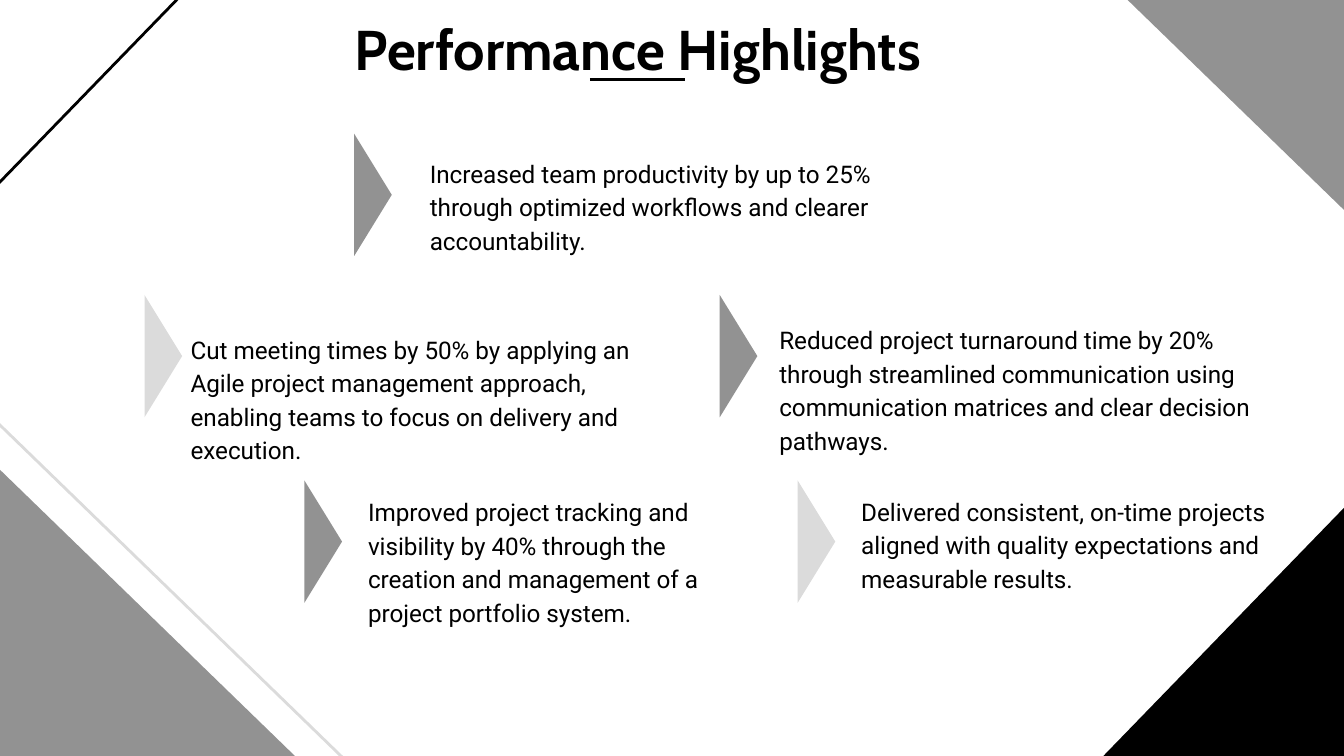
from dataclasses import dataclass

from lxml.etree import SubElement
from pptx import Presentation
from pptx.dml.color import RGBColor
from pptx.enum.shapes import MSO_CONNECTOR, MSO_SHAPE
from pptx.enum.text import PP_ALIGN
from pptx.oxml.ns import qn
from pptx.util import Inches, Pt


@dataclass(frozen=True)
class Theme:
    black: RGBColor = RGBColor(0x00, 0x00, 0x00)
    gray: RGBColor = RGBColor(0x92, 0x92, 0x92)
    light: RGBColor = RGBColor(0xDB, 0xDB, 0xDB)
    head_font: str = "Cabin"
    body_font: str = "Roboto"
    head_size: float = 30
    body_size: float = 13
    stroke: float = 1.5
    spacing: float = 1.15


class Deck:
    def __init__(self, theme):
        self.theme = theme
        self.show = Presentation()
        self.show.slide_width = Inches(10)
        self.show.slide_height = Inches(10 * 9 / 16)
        self.slide = self.show.slides.add_slide(self.show.slide_layouts[6])

    def shape(self, kind, box, turn, fill=None, line=None):
        item = self.slide.shapes.add_shape(kind, *map(Inches, box))
        item.rotation = turn
        item.shadow.inherit = False
        if fill is None:
            item.fill.background()
        else:
            item.fill.solid()
            item.fill.fore_color.rgb = fill
        if line is None:
            item.line.fill.background()
        else:
            item.line.color.rgb = line
            item.line.width = Pt(self.theme.stroke)

    def corner(self, box, turn, fill=None, line=None):
        self.shape(MSO_SHAPE.RIGHT_TRIANGLE, box, turn, fill, line)

    def marker(self, left, top, fill):
        self.shape(MSO_SHAPE.ISOSCELES_TRIANGLE, (left, top, 0.91, 0.28), 90, fill)

    def rule(self, left, right, top):
        line = self.slide.shapes.add_connector(
            MSO_CONNECTOR.STRAIGHT, Inches(left), Inches(top), Inches(right), Inches(top))
        line.line.color.rgb = self.theme.black
        line.line.width = Pt(self.theme.stroke)
        SubElement(line._element.spPr, qn("a:effectLst"))

    def text(self, words, box, font, size, inset=0.1):
        frame = self.slide.shapes.add_textbox(*map(Inches, box)).text_frame
        frame.word_wrap = True
        frame.margin_left = frame.margin_right = frame.margin_bottom = Inches(0.1)
        frame.margin_top = Inches(inset)
        frame.text = words
        para = frame.paragraphs[0]
        style = para.runs[0].font
        style.name, style.size = font, Pt(size)
        style.color.rgb = self.theme.black
        return para

    def title(self, words, box):
        para = self.text(words, box, self.theme.head_font, self.theme.head_size)
        para.alignment = PP_ALIGN.CENTER
        para.runs[0].font.bold = True

    def body(self, words, box, inset):
        para = self.text(words, box, self.theme.body_font, self.theme.body_size, inset)
        para.line_spacing = self.theme.spacing


def main():
    theme = Theme()
    deck = Deck(theme)
    wide, high = 3.72, 3.61

    deck.corner((8, 3.53, 2.31, 2.24), 270, fill=theme.black)
    deck.corner((-0.57, 2.61, wide, high), 0, line=theme.light)
    deck.corner((-0.81, 2.71, wide, high), 0, fill=theme.gray)
    deck.corner((7.36, -1, wide, high), 180, fill=theme.gray)
    deck.corner((-0.29, -2.07, wide, high), 90, line=theme.black)

    deck.title("Performance Highlights", (0.53, 0.01, 8.43, 0.58))
    deck.rule(4.39, 5.1, 0.59)

    points = [
        ("Increased team productivity by up to 25% through optimized workflows "
         "and clearer accountability.",
         (3.1, 1.05, 3.6, 0.92), 0.1, (2.32, 1.31), theme.gray),
        ("Cut meeting times by 50% by applying an Agile project management "
         "approach, enabling teams to focus on delivery and execution.",
         (1.32, 2.15, 3.86, 0.74), 0.31, (0.76, 2.51), theme.light),
        ("Reduced project turnaround time by 20% through streamlined communication "
         "using communication matrices and clear decision pathways.",
         (5.7, 2.29, 4.09, 0.74), 0.1, (5.04, 2.51), theme.gray),
        ("Improved project tracking and visibility by 40% through the creation "
         "and management of a project portfolio system.",
         (2.64, 3.57, 3.07, 1.32), 0.1, (1.95, 3.89), theme.gray),
        ("Delivered consistent, on-time projects aligned with quality expectations "
         "and measurable results.",
         (6.31, 2.89, 3.6, 1.9), 0.9, (5.62, 3.89), theme.light),
    ]
    for words, box, inset, spot, fill in points:
        deck.marker(*spot, fill)
        deck.body(words, box, inset)

    deck.show.save("out.pptx")


if __name__ == "__main__":
    main()
